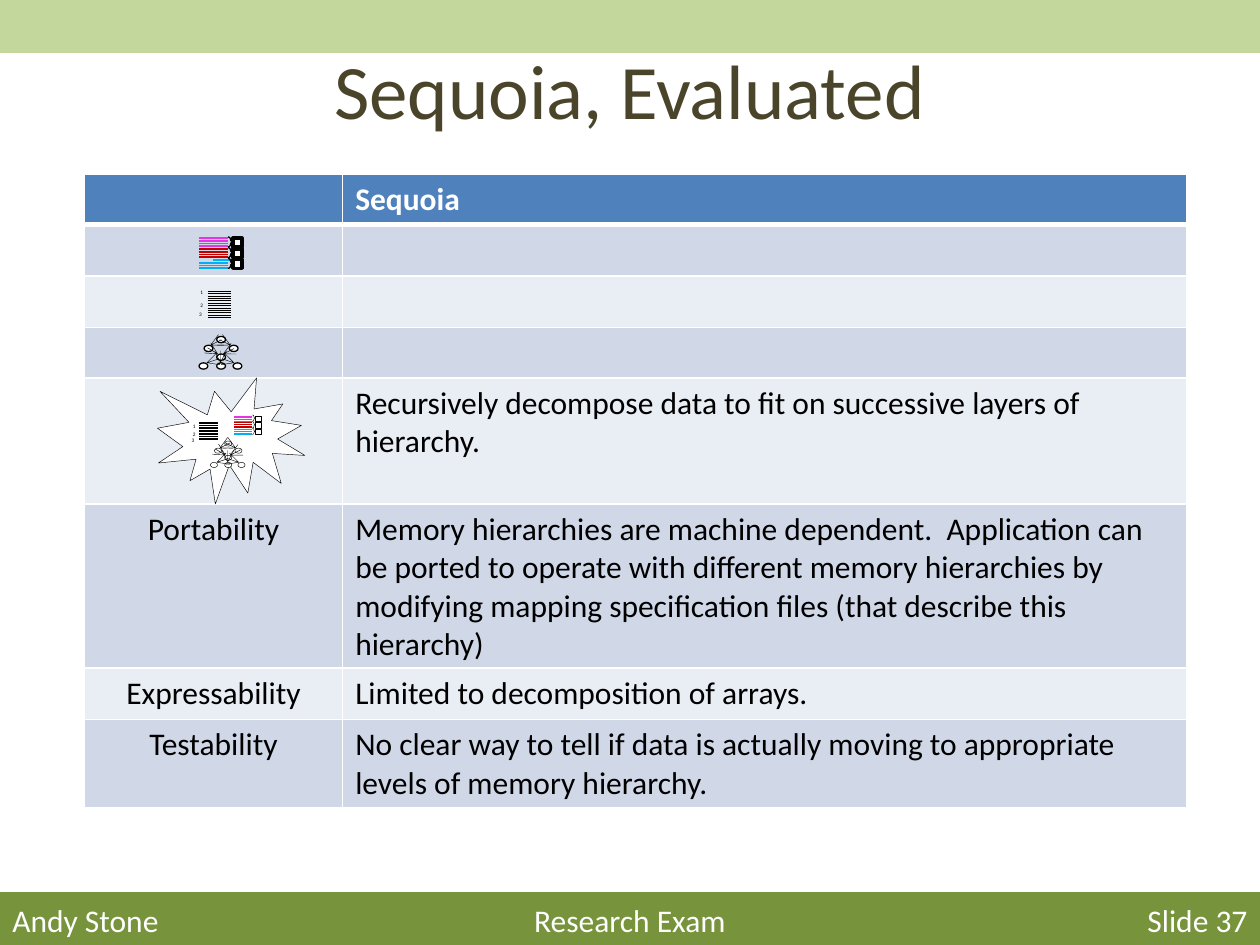
from lxml.etree import SubElement
from pptx import Presentation
from pptx.dml.color import RGBColor
from pptx.enum.shapes import MSO_CONNECTOR, MSO_SHAPE
from pptx.enum.text import MSO_ANCHOR, PP_ALIGN
from pptx.oxml.ns import qn
from pptx.util import Inches, Pt

FONT = "Calibri"
BLACK, WHITE = "000000", "FFFFFF"
PINK, RED, CYAN = "E335E3", "C00000", "00B0F0"
TITLE = "Sequoia, Evaluated"
FOOTER = [("Andy Stone", PP_ALIGN.LEFT), ("Research Exam", PP_ALIGN.CENTER),
          ("Slide 37", PP_ALIGN.RIGHT)]

# Row height, label, finding; the rows without a label hold an icon
ROWS = [
    (0.4, "", "Sequoia"),
    (0.41, "", ""),
    (0.41, "", ""),
    (0.4, "", ""),
    (1, "", "Recursively decompose data to fit on successive layers of hierarchy."),
    (1.3, "Portability",
     "Memory hierarchies are machine dependent.  Application can be ported to "
     "operate with different memory hierarchies by modifying mapping "
     "specification files (that describe this hierarchy)"),
    (0.41, "Expressability", "Limited to decomposition of arrays."),
    (0.7, "Testability",
     "No clear way to tell if data is actually moving to appropriate levels of "
     "memory hierarchy."),
]
COLS = [2.05, 6.7]

# Icon parts, in inches from the icon's own origin
DIGITS = [("1", -0.06, -0.06), ("2", -0.06, 0.04), ("3", -0.07, 0.11)]
NODES = [(0.14, 0), (0.04, 0.07), (0.24, 0.07), (0.14, 0.14),
         (0, 0.21), (0.14, 0.21), (0.27, 0.21)]
EDGES = [(0.19, 0.04, 0.25, 0.07), (0.15, 0.04, 0.09, 0.07),
         (0.25, 0.11, 0.19, 0.14), (0.1, 0.11, 0.15, 0.14),
         (0.19, 0.18, 0.28, 0.21), (0.17, 0.18, 0.17, 0.21),
         (0.15, 0.18, 0.06, 0.21)]


def rgb(code):
    return RGBColor.from_string(code)


def write(frame, text, size, color, align=PP_ALIGN.LEFT, bold=False):
    frame.text = text
    para = frame.paragraphs[0]
    para.alignment = align
    para.font.size = Pt(size)
    for run in para.runs:
        font = run.font
        font.name, font.size, font.bold = FONT, Pt(size), bold
        font.color.rgb = rgb(color)


def add_text(parent, box, text, size, color, align=PP_ALIGN.LEFT):
    frame = parent.add_textbox(*map(Inches, box)).text_frame
    frame.word_wrap = True
    write(frame, text, size, color, align)
    return frame


def add_shape(parent, kind, box, fill=None, width=None):
    shape = parent.add_shape(kind, *map(Inches, box))
    shape.shadow.inherit = False
    if fill:
        shape.fill.solid()
        shape.fill.fore_color.rgb = rgb(fill)
    else:
        shape.fill.background()
    if width:
        shape.line.color.rgb = rgb(BLACK)
        shape.line.width = Pt(width)
    else:
        shape.line.fill.background()
    return shape


def add_line(parent, ends, color, width, arrow=False):
    line = parent.add_connector(MSO_CONNECTOR.STRAIGHT, *map(Inches, ends))
    line.line.color.rgb = rgb(color)
    line.line.width = Pt(width)
    props = line.line._get_or_add_ln()
    if arrow:
        SubElement(props, qn("a:tailEnd"), type="arrow")
    SubElement(props.getparent(), qn("a:effectLst"))


def draw_data(parent, x, y, scale, widths, shift=0):
    """Coloured stripes, braced in three sets that each lead to a box."""
    thick, frame, thin = widths
    for i in range(12):
        left = x + (shift if i == 8 else 0)
        top = y + i * 0.0218 * scale
        add_line(parent, (left, top, left + 0.23 * scale, top),
                 (PINK, RED, CYAN)[i // 4], thick)
    for i in range(3):
        top = y + i * 0.085 * scale
        side = 0.07 * scale
        add_shape(parent, MSO_SHAPE.RECTANGLE,
                  (x + 0.27 * scale, top, side, side), WHITE, frame)
        brace = add_shape(parent, MSO_SHAPE.RIGHT_BRACE,
                          (x + 0.23 * scale, top - 0.01 * scale,
                           0.04 * scale, 0.08 * scale), None, thin)
        brace.adjustments[0] = 0.545


def draw_code(parent, x, y, sx=1, sy=1):
    """Lines of a listing with three numbers at the left."""
    for i in range(12):
        top = y + i * 0.019 * sy
        add_line(parent, (x, top, x + 0.18 * sx, top), BLACK, 0.25)
    for digit, dx, dy in DIGITS:
        box = (x + dx * sx, y + dy * sy, 0.06 * sx, 0.15 * sy)
        frame = add_text(parent, box, digit, 3, BLACK)
        frame.margin_left = frame.margin_right = 0
        frame.word_wrap = False


def draw_tree(parent, x, y, scale, width):
    for dx, dy in NODES:
        add_shape(parent, MSO_SHAPE.OVAL,
                  (x + dx * scale, y + dy * scale, 0.07 * scale, 0.05 * scale),
                  WHITE, width)
    for x1, y1, x2, y2 in EDGES:
        add_line(parent, (x + x1 * scale, y + y1 * scale,
                          x + x2 * scale, y + y2 * scale), BLACK, 0.25, True)


def set_edges(cell, base):
    """White cell borders, the lower one with a width of its own."""
    props = cell._tc.get_or_add_tcPr()
    for i, (tag, width) in enumerate(
            [("lnL", 1), ("lnR", 1), ("lnT", 1), ("lnB", base)]):
        edge = props.makeelement(qn("a:" + tag), {"w": str(Pt(width))})
        fill = SubElement(edge, qn("a:solidFill"))
        SubElement(fill, qn("a:srgbClr"), val=WHITE)
        props.insert(i, edge)


def fill_table(shapes):
    high = sum(row[0] for row in ROWS)
    table = shapes.add_table(len(ROWS), len(COLS), Inches(0.67), Inches(1.38),
                             Inches(sum(COLS)), Inches(high)).table
    for col, width in zip(table.columns, COLS):
        col.width = Inches(width)
    for r, (height, *texts) in enumerate(ROWS):
        table.rows[r].height = Inches(height)
        head = r == 0
        shade = "4F81BD" if head else ("E9EDF4", "D0D8E8")[r % 2]
        for c, text in enumerate(texts):
            cell = table.cell(r, c)
            cell.fill.solid()
            cell.fill.fore_color.rgb = rgb(shade)
            set_edges(cell, 3 if head else 1)
            write(cell.text_frame, text, 18, WHITE if head else BLACK,
                  PP_ALIGN.LEFT if c else PP_ALIGN.CENTER, head)


def main():
    deck = Presentation()
    deck.slide_width, deck.slide_height = Inches(10), Inches(7.5)
    shapes = deck.slides.add_slide(deck.slide_layouts[6]).shapes

    add_shape(shapes, MSO_SHAPE.RECTANGLE, (0, 0, 10, 0.42), "C3D69B")
    add_shape(shapes, MSO_SHAPE.RECTANGLE, (0, 7.08, 10, 0.42), "77933C")
    for text, align in FOOTER:
        add_text(shapes, (0, 7.1, 10, 0.4), text, 18, WHITE, align)
    fill_table(shapes)
    title = add_text(shapes, (0.5, 0.08, 9, 1.25), TITLE, 44, "4A452A",
                     PP_ALIGN.CENTER)
    title.vertical_anchor = MSO_ANCHOR.MIDDLE

    data, tree, code, burst = (shapes.add_group_shape().shapes for _ in range(4))
    draw_data(data, 1.58, 1.89, 1, (1, 2, 0.75), 0.11)
    draw_tree(tree, 1.58, 2.67, 1, 0.75)
    draw_code(code, 1.65, 2.31)
    add_shape(burst, MSO_SHAPE.EXPLOSION1, (1.25, 3, 1.17, 1), WHITE, 0.25)
    draw_code(burst, 1.58, 3.35, 0.83, 0.66)
    draw_data(burst, 1.86, 3.3, 0.62, (0.25, 0.25, 0.25))
    draw_tree(burst, 1.67, 3.5, 0.81, 0.25)
    deck.save("out.pptx")


if __name__ == "__main__":
    main()
